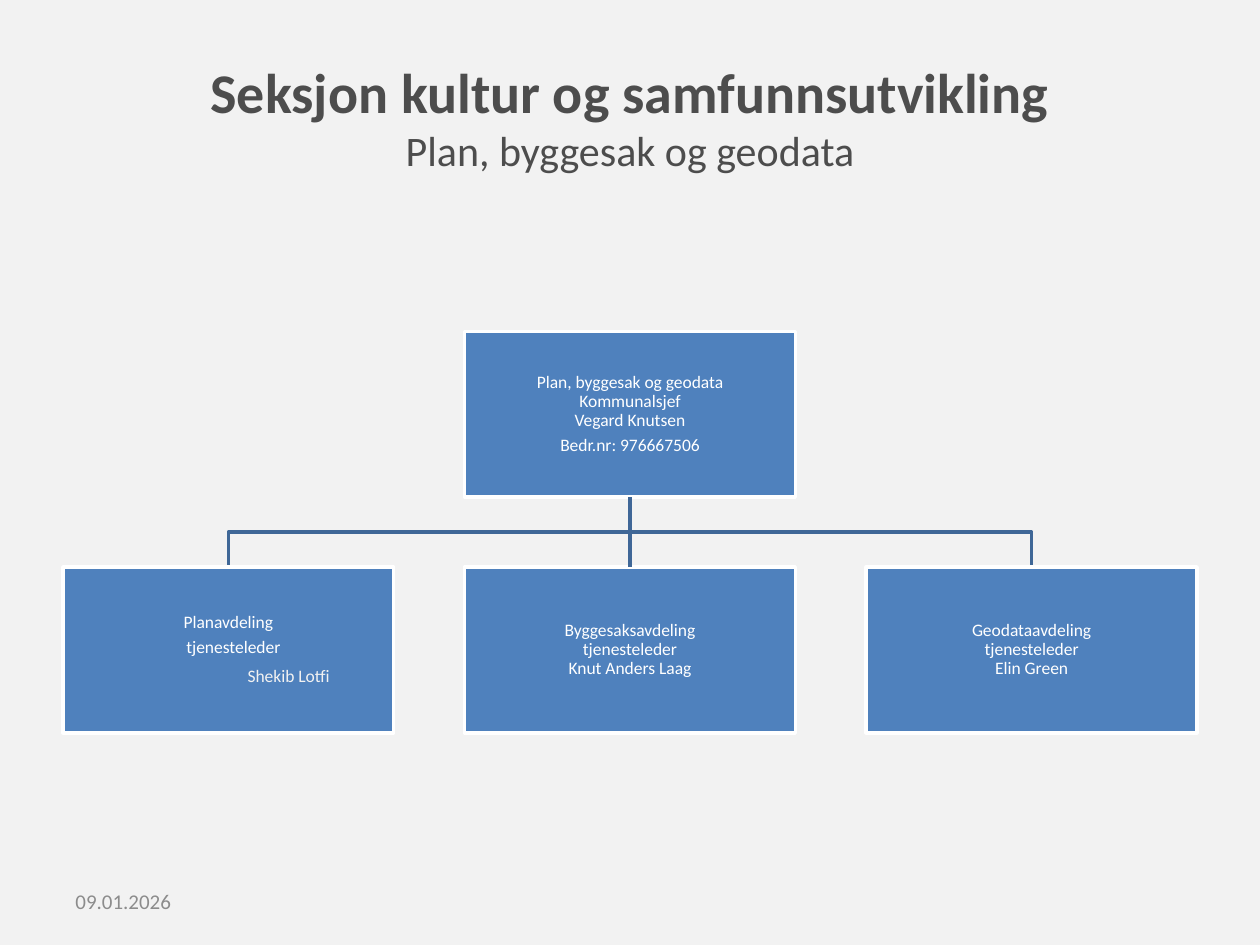
from pptx import Presentation
from pptx.dml.color import RGBColor
from pptx.enum.shapes import MSO_CONNECTOR, MSO_SHAPE
from pptx.enum.text import MSO_ANCHOR, PP_ALIGN
from pptx.oxml.ns import qn
from pptx.util import Pt
from lxml.etree import SubElement

FONT = "Calibri"
WHITE = "FFFFFF"
BOX_BLUE = "4F81BD"
LINE_BLUE = "3F6797"
TITLE_GREY = "4D4D4D"

LEADER = ["Plan, byggesak og geodata\vKommunalsjef\vVegard Knutsen", "Bedr.nr: 976667506"]
DEPARTMENTS = [
    ["Planavdeling", "tjenesteleder", "Shekib Lotfi"],
    ["Byggesaksavdeling\vtjenesteleder\vKnut Anders Laag"],
    ["Geodataavdeling\vtjenesteleder\vElin Green"],
]


def color(value):
    return RGBColor.from_string(value)


def set_font(font, size, value):
    font.name = FONT
    font.size = Pt(size)
    font.color.rgb = color(value)


def add_text_box(slide, left, top, width, height):
    frame = slide.shapes.add_textbox(Pt(left), Pt(top), Pt(width), Pt(height)).text_frame
    frame.word_wrap = True
    frame.vertical_anchor = MSO_ANCHOR.MIDDLE
    return frame.paragraphs[0]


def add_title(slide, left, top, width, height):
    paragraph = add_text_box(slide, left, top, width, height)
    paragraph.alignment = PP_ALIGN.CENTER
    set_font(paragraph.font, 32, TITLE_GREY)
    heading = paragraph.add_run()
    heading.text = "Seksjon kultur og samfunnsutvikling"
    heading.font.bold = True
    paragraph.add_line_break()
    subheading = paragraph.add_run()
    subheading.text = "Plan, byggesak og geodata"
    subheading.font.size = Pt(24)


def add_date(slide, left, top, width, height):
    paragraph = add_text_box(slide, left, top, width, height)
    paragraph.text = "09.01.2026"
    set_font(paragraph.font, 12, "8C8C8C")


def add_unit(slide, lines, left, top, width, height):
    shape = slide.shapes.add_shape(MSO_SHAPE.RECTANGLE, Pt(left), Pt(top), Pt(width), Pt(height))
    shape.shadow.inherit = False
    shape.fill.solid()
    shape.fill.fore_color.rgb = color(BOX_BLUE)
    shape.line.color.rgb = color(WHITE)
    shape.line.width = Pt(2)
    frame = shape.text_frame
    frame.word_wrap = True
    frame.vertical_anchor = MSO_ANCHOR.MIDDLE
    frame.margin_left = frame.margin_right = Pt(0.5)
    frame.margin_top = frame.margin_bottom = Pt(0.5)
    for index, line in enumerate(lines):
        paragraph = frame.paragraphs[0] if index == 0 else frame.add_paragraph()
        paragraph.text = line
        paragraph.alignment = PP_ALIGN.CENTER
        paragraph.line_spacing = 0.9
        paragraph.space_after = Pt(3.5)
        set_font(paragraph.font, 10, WHITE)
    return shape


def indent_left(paragraph, indent):
    paragraph.alignment = PP_ALIGN.LEFT
    properties = paragraph._p.get_or_add_pPr()
    properties.set("marL", str(Pt(indent)))
    properties.set("indent", "0")


def style_line(shape):
    shape.line.color.rgb = color(LINE_BLUE)
    shape.line.width = Pt(2)


def add_straight_link(slide, parent, child):
    connector = slide.shapes.add_connector(MSO_CONNECTOR.STRAIGHT, 0, 0, 0, 0)
    connector.begin_connect(parent, 2)
    connector.end_connect(child, 0)
    style_line(connector)
    SubElement(connector._element.spPr, qn("a:effectLst"))


def add_bent_link(slide, start_x, start_y, end_x, end_y):
    middle_y = (start_y + end_y) / 2
    builder = slide.shapes.build_freeform(Pt(start_x), Pt(start_y))
    points = [(start_x, middle_y), (end_x, middle_y), (end_x, end_y)]
    builder.add_line_segments([(Pt(x), Pt(y)) for x, y in points], close=False)
    shape = builder.convert_to_shape()
    shape.shadow.inherit = False
    shape.fill.background()
    style_line(shape)


def add_organisation_chart(slide, left, top, width, height):
    unit_width, unit_height = 189, 94.8
    step = (width - unit_width) / (len(DEPARTMENTS) - 1)
    row_top = top + height - unit_height
    center = left + width / 2
    for end_x in (left + unit_width / 2, left + width - unit_width / 2):
        add_bent_link(slide, center, top + unit_height, end_x, row_top)
    leader = add_unit(slide, LEADER, center - unit_width / 2, top, unit_width, unit_height)
    units = [
        add_unit(slide, lines, left + index * step, row_top, unit_width, unit_height)
        for index, lines in enumerate(DEPARTMENTS)
    ]
    add_straight_link(slide, leader, units[1])

    role, name = units[0].text_frame.paragraphs[1:]
    indent_left(role, 70)
    indent_left(name, 105)
    role.space_after = Pt(6)
    name.font.color.rgb = color("F2F2F2")


def main():
    presentation = Presentation()
    presentation.slide_width = Pt(720)
    presentation.slide_height = Pt(540)
    slide = presentation.slides.add_slide(presentation.slide_layouts[6])
    slide.background.fill.solid()
    slide.background.fill.fore_color.rgb = color("F2F2F2")
    add_title(slide, 36.5, 21.5, 647, 90)
    add_organisation_chart(slide, 36, 189.4, 648, 229.4)
    add_date(slide, 36, 500.5, 168, 28.8)
    presentation.save("out.pptx")


if __name__ == "__main__":
    main()
